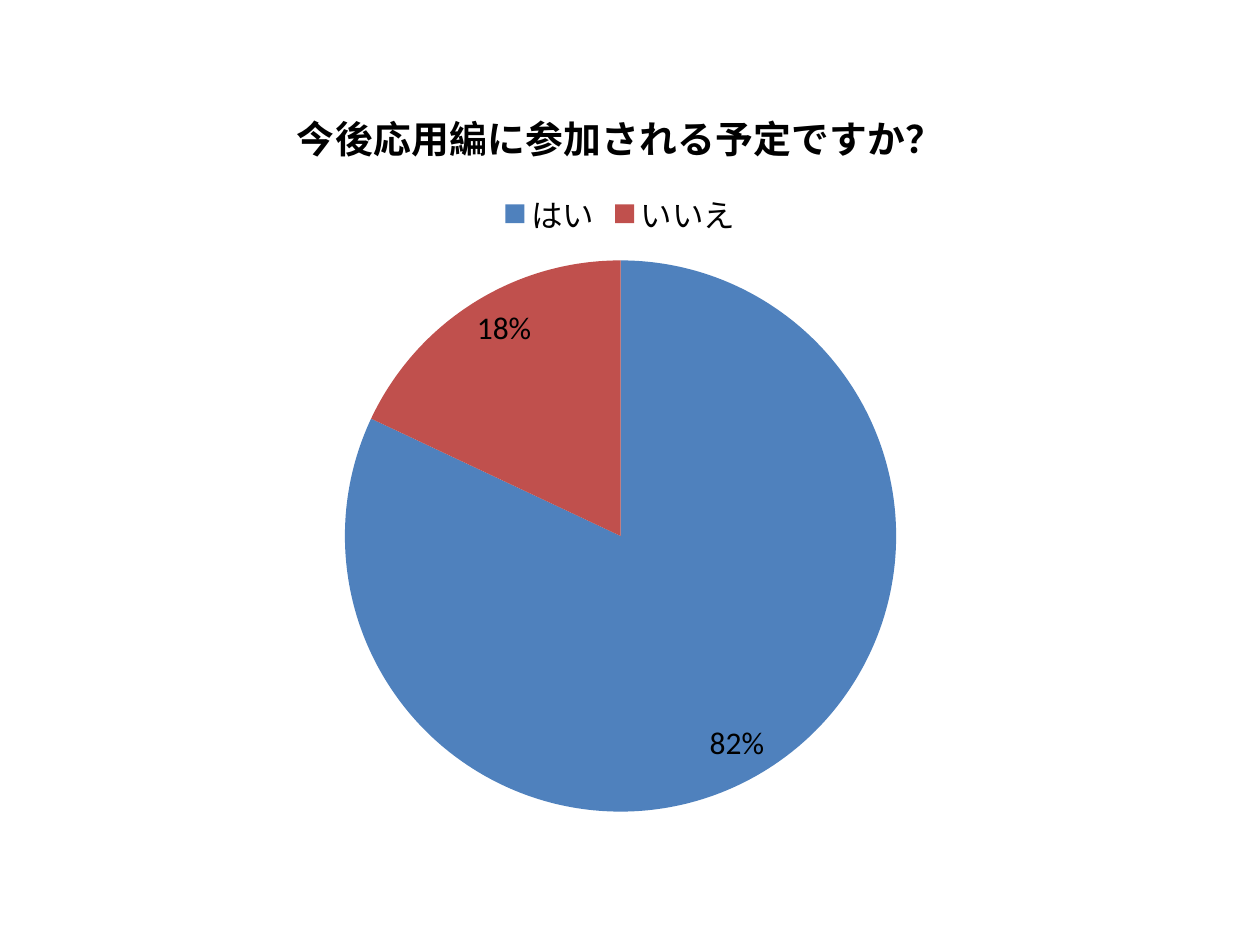
"""Build a slide with one pie chart of survey answers."""
from dataclasses import dataclass

from pptx import Presentation
from pptx.chart.data import CategoryChartData
from pptx.dml.color import RGBColor
from pptx.enum.chart import XL_CHART_TYPE, XL_LABEL_POSITION, XL_LEGEND_POSITION
from pptx.util import Inches, Pt

PIE = XL_CHART_TYPE.PIE
TOP = XL_LEGEND_POSITION.TOP
INSIDE = XL_LABEL_POSITION.INSIDE_END
FONT = "Calibri"
BLACK = "000000"


@dataclass
class Answer:
    name: str
    share: int
    color: str


TITLE = "今後応用編に参加される予定ですか？"
ANSWERS = [Answer("はい", 82, "4F81BD"), Answer("いいえ", 18, "C0504D")]


def rgb(color: str) -> RGBColor:
    return RGBColor.from_string(color)


def style(font, size: float = 18, bold: bool = False, color: str = BLACK) -> None:
    font.name, font.size, font.bold = FONT, Pt(size), bold
    font.color.rgb = rgb(color)


def write(frame, text: str, **form) -> None:
    run = frame.paragraphs[0].add_run()
    run.text = text
    style(run.font, **form)


def draw_pie(slide, title: str, answers: list[Answer]) -> None:
    data = CategoryChartData(number_format="0")
    data.categories = [answer.name for answer in answers]
    data.add_series(title, [answer.share for answer in answers])
    box = [Inches(n) for n in (0.83, 0.6, 8.19, 5.98)]
    chart = slide.shapes.add_chart(PIE, *box, data).chart
    style(chart.font)
    chart.has_title = True
    write(chart.chart_title.text_frame, title, size=21.6, bold=True)
    chart.chart_title.include_in_layout = False

    chart.has_legend = True
    chart.legend.position = TOP
    chart.legend.include_in_layout = False
    style(chart.legend.font)

    plot = chart.plots[0]
    plot.vary_by_categories = True
    plot.has_data_labels = True
    labels = plot.data_labels
    labels.show_value = False
    labels.show_percentage = True
    labels.number_format = "0%"
    labels.number_format_is_linked = False
    labels.position = INSIDE
    style(labels.font)
    for i, answer in enumerate(answers):
        fill = plot.series[0].points[i].format.fill
        fill.solid()
        fill.fore_color.rgb = rgb(answer.color)


def main() -> None:
    deck = Presentation()
    deck.slide_width, deck.slide_height = Inches(10), Inches(7.5)
    slide = deck.slides.add_slide(deck.slide_layouts[6])
    draw_pie(slide, TITLE, ANSWERS)
    deck.save("out.pptx")


if __name__ == "__main__":
    main()
